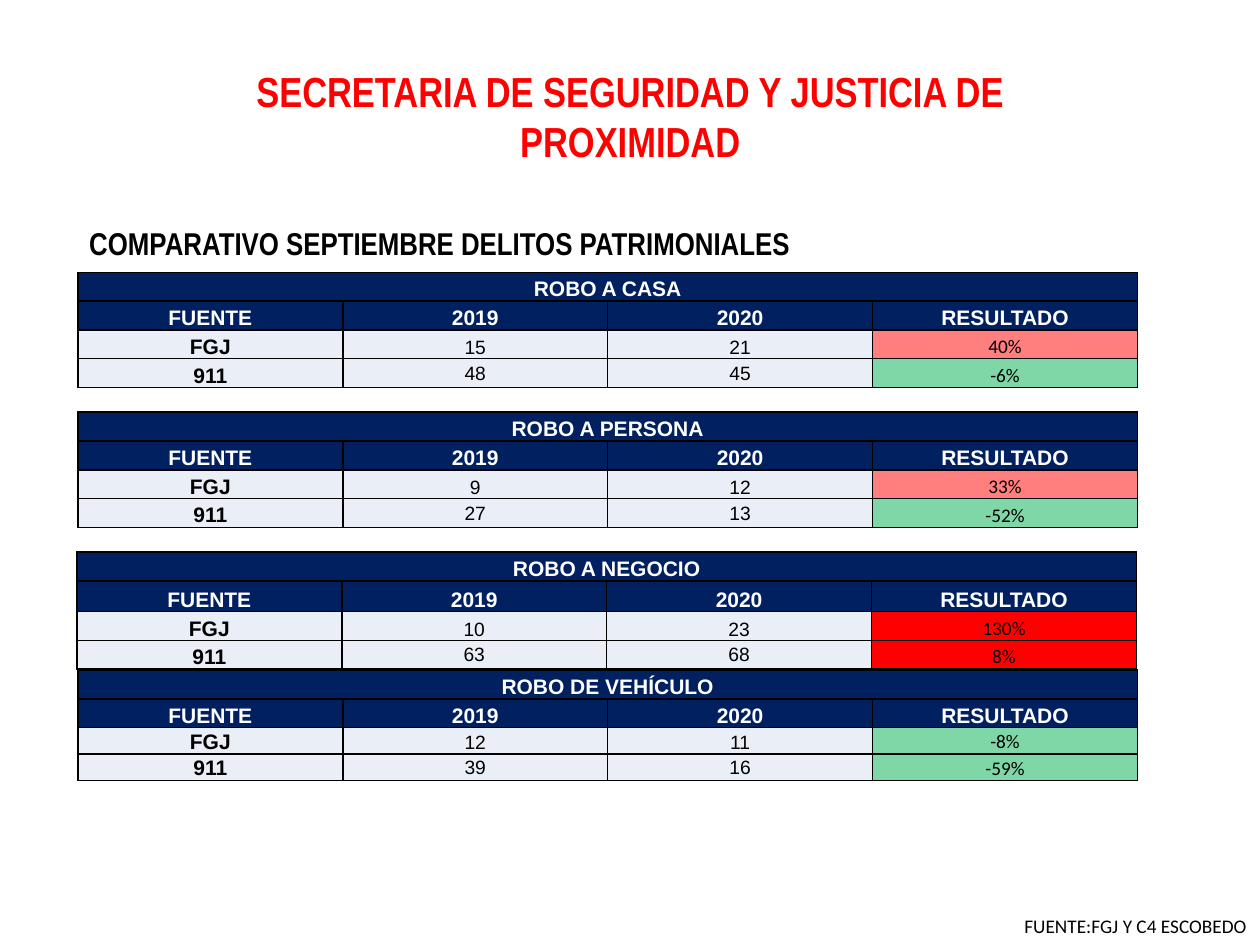
from lxml import etree
from pptx import Presentation
from pptx.dml.color import RGBColor
from pptx.enum.text import MSO_ANCHOR, MSO_AUTO_SIZE, PP_ALIGN
from pptx.oxml.ns import qn
from pptx.util import Cm, Pt

BOTTOM = MSO_ANCHOR.BOTTOM
MIDDLE = MSO_ANCHOR.MIDDLE
CENTER = PP_ALIGN.CENTER
LEFT = PP_ALIGN.LEFT
FIT_SHAPE = MSO_AUTO_SIZE.SHAPE_TO_FIT_TEXT

NAVY = "002060"
PALE = "EAEFF7"
RED = "FF0000"
GREEN = "00B050"
BLACK = "000000"
WHITE = "FFFFFF"

TABLE_WIDTH = 21.36
ROW = 0.58
HEADINGS = ["FUENTE", "2019", "2020", "RESULTADO"]
EQUAL_ROWS = [ROW] * 4

THEFT_TABLES = [
    (1.57, 5.49, EQUAL_ROWS, "ROBO A CASA",
     [("FGJ", "15", "21", "40%", RED, 50), ("911", "48", "45", "-6%", GREEN, 50)]),
    (1.57, 8.31, EQUAL_ROWS, "ROBO A PERSONA",
     [("FGJ", "9", "12", "33%", RED, 50), ("911", "27", "13", "-52%", GREEN, 50)]),
    (1.55, 11.13, [ROW, 0.62, ROW, ROW], "ROBO A NEGOCIO",
     [("FGJ", "10", "23", "130%", RED, 100), ("911", "63", "68", "8%", RED, 100)]),
    (1.57, 13.51, [ROW, ROW, 0.53, 0.53], "ROBO DE VEHÍCULO",
     [("FGJ", "12", "11", "-8%", GREEN, 50), ("911", "39", "16", "-59%", GREEN, 50)]),
]


def color(hex_value):
    return RGBColor.from_string(hex_value)


def add_run(paragraph, text, size, font_name, hex_value, bold):
    run = paragraph.add_run()
    run.text = text
    run.font.size = Pt(size)
    run.font.name = font_name
    run.font.bold = bold
    run.font.color.rgb = color(hex_value)


def add_borders(cell):
    properties = cell._tc.get_or_add_tcPr()
    for side in ("a:lnL", "a:lnR", "a:lnT", "a:lnB"):
        line = etree.SubElement(properties, qn(side), w=str(Pt(1)))
        fill = etree.SubElement(line, qn("a:solidFill"))
        etree.SubElement(fill, qn("a:srgbClr"), val=BLACK)


def fill_cell(cell, hex_value, opacity=100):
    cell.fill.solid()
    cell.fill.fore_color.rgb = color(hex_value)
    if opacity < 100:
        fill_color = cell._tc.tcPr.find(qn("a:solidFill")).find(qn("a:srgbClr"))
        etree.SubElement(fill_color, qn("a:alpha"), val=str(opacity * 1000))


def write_cell(cell, text, size=12, font_name="Arial", hex_value=BLACK, bold=True, anchor=BOTTOM):
    cell.vertical_anchor = anchor
    paragraph = cell.text_frame.paragraphs[0]
    paragraph.alignment = CENTER
    add_run(paragraph, text, size, font_name, hex_value, bold)


def add_theft_table(slide, left, top, row_heights, title, records):
    shape = slide.shapes.add_table(
        4, 4, Cm(left), Cm(top), Cm(TABLE_WIDTH), Cm(sum(row_heights)))
    table = shape.table
    for column in table.columns:
        column.width = Cm(TABLE_WIDTH / 4)
    for row, height in zip(table.rows, row_heights):
        row.height = Cm(height)
    for cell in table.iter_cells():
        cell.margin_left = cell.margin_right = cell.margin_top = Cm(0.02)
        cell.margin_bottom = 0
        add_borders(cell)

    for row_index in range(2):
        for column_index in range(4):
            fill_cell(table.cell(row_index, column_index), NAVY)
    table.cell(0, 0).merge(table.cell(0, 3))
    write_cell(table.cell(0, 0), title, hex_value=WHITE)
    for column_index, heading in enumerate(HEADINGS):
        write_cell(table.cell(1, column_index), heading, hex_value=WHITE)

    for row_index, record in enumerate(records, start=2):
        source, previous, current, result, result_color, opacity = record
        cells = [table.cell(row_index, column_index) for column_index in range(4)]
        for cell in cells[:3]:
            fill_cell(cell, PALE)
        fill_cell(cells[3], result_color, opacity)
        write_cell(cells[0], source)
        number_anchor = BOTTOM if row_index == 2 else MIDDLE
        for cell, number in zip(cells[1:3], (previous, current)):
            write_cell(cell, number, size=11, bold=False, anchor=number_anchor)
        write_cell(cells[3], result, size=11, font_name="Calibri", bold=False)


def add_label(slide, box, text, size, font_name, hex_value, bold, alignment=LEFT, wrap=True):
    shape = slide.shapes.add_textbox(*(Cm(length) for length in box))
    frame = shape.text_frame
    frame.word_wrap = wrap
    frame.auto_size = FIT_SHAPE
    paragraph = frame.paragraphs[0]
    paragraph.alignment = alignment
    add_run(paragraph, text, size, font_name, hex_value, bold)


def main():
    presentation = Presentation()
    presentation.slide_width = Cm(25.4)
    presentation.slide_height = Cm(19.05)
    slide = presentation.slides.add_slide(presentation.slide_layouts[6])
    add_label(slide, (4.83, 1.19, 15.75, 2.31),
              "SECRETARIA DE SEGURIDAD Y JUSTICIA DE PROXIMIDAD",
              24, "Arial Narrow", RED, True, CENTER)
    for theft_table in THEFT_TABLES:
        add_theft_table(slide, *theft_table)
    add_label(slide, (1.55, 4.39, 18.75, 1.02),
              "COMPARATIVO SEPTIEMBRE DELITOS PATRIMONIALES",
              18, "Arial Narrow", BLACK, True)
    add_label(slide, (20.4, 18.31, 5.03, 0.74), "FUENTE:FGJ Y C4 ESCOBEDO",
              11, "Calibri", BLACK, False, wrap=False)
    presentation.save("out.pptx")


if __name__ == "__main__":
    main()
